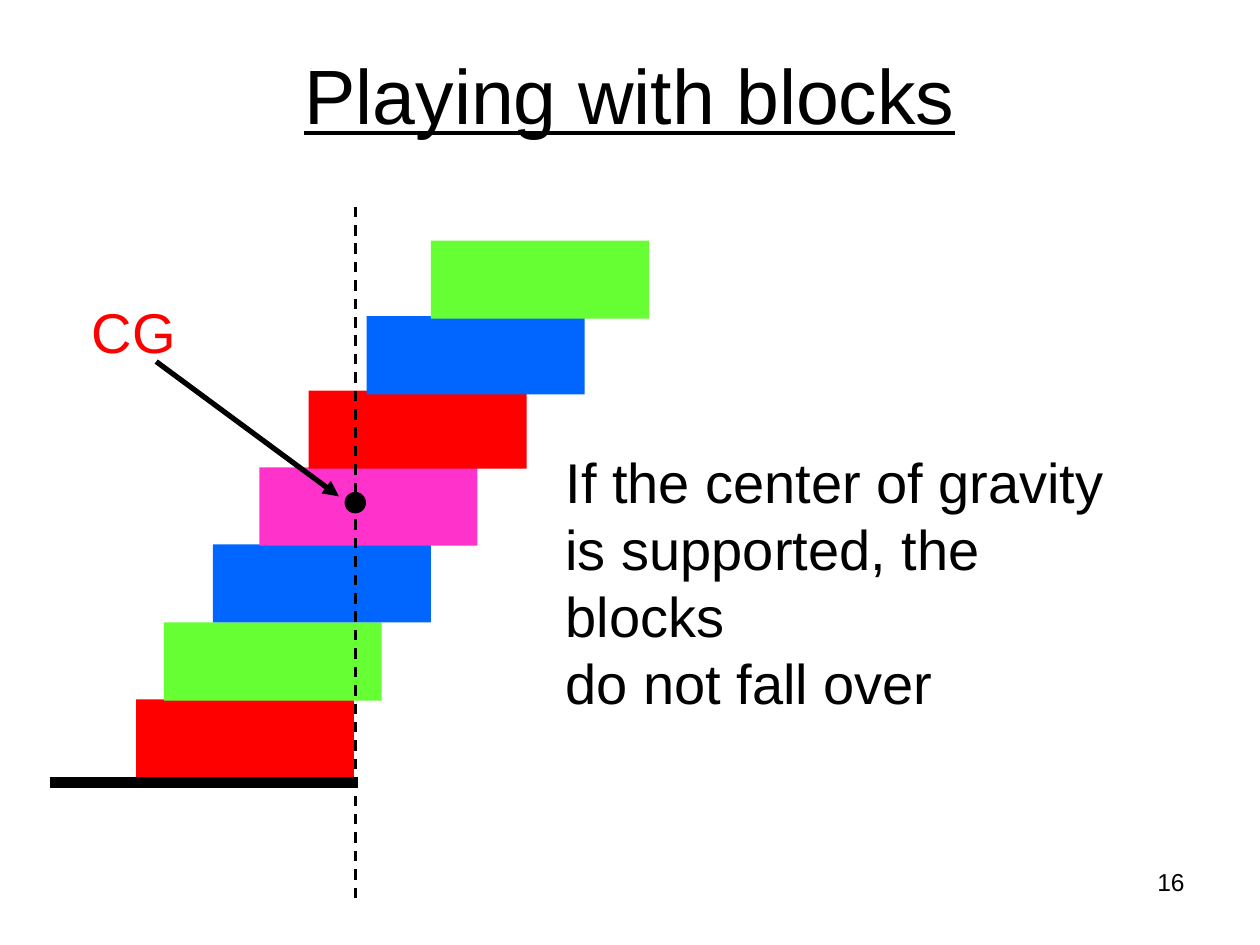
"""Build a slide showing a leaning stack of blocks balanced over its support."""
from lxml import etree
from pptx import Presentation
from pptx.dml.color import RGBColor
from pptx.enum.dml import MSO_LINE
from pptx.enum.shapes import MSO_CONNECTOR, MSO_SHAPE
from pptx.enum.text import MSO_ANCHOR, PP_ALIGN
from pptx.oxml.ns import qn
from pptx.util import Inches, Pt

RECTANGLE, OVAL = MSO_SHAPE.RECTANGLE, MSO_SHAPE.OVAL
STRAIGHT, DASH = MSO_CONNECTOR.STRAIGHT, MSO_LINE.DASH
TOP, MIDDLE = MSO_ANCHOR.TOP, MSO_ANCHOR.MIDDLE
LEFT, CENTER, RIGHT = PP_ALIGN.LEFT, PP_ALIGN.CENTER, PP_ALIGN.RIGHT

FONT = "Arial"
COLORS = {"black": "000000", "red": "FF0000", "green": "66FF33",
          "blue": "0066FF", "pink": "FF33CC"}

BLOCK_WIDTH, BLOCK_HEIGHT = 1.73, 0.62
BLOCKS = [
    (1.08, 5.55, "red"),
    (1.30, 4.94, "green"),
    (1.69, 4.32, "blue"),
    (2.06, 3.71, "pink"),
    (2.45, 3.10, "red"),
    (2.91, 2.51, "blue"),
    (3.42, 1.91, "green"),
]
TABLE_EDGE = ((0.4, 6.21), (2.84, 6.21))
PLUMB_LINE = ((2.82, 1.64), (2.82, 7.14))
CG_ARROW = ((1.24, 2.87), (2.69, 3.94))
CG_DOT = (2.74, 3.91, 0.16, 0.16)

TITLE = ["Playing with blocks"]
EXPLANATION = ["If the center of gravity", "is supported, the blocks", "do not fall over"]


def add_filled(slide, kind, box, color):
    shape = slide.shapes.add_shape(kind, *map(Inches, box))
    shape.shadow.inherit = False
    shape.fill.solid()
    shape.fill.fore_color.rgb = RGBColor.from_string(COLORS[color])
    shape.line.fill.background()
    return shape


def style_line(line, width):
    line.color.rgb = RGBColor.from_string(COLORS["black"])
    line.width = Pt(width)


def add_line(slide, ends, width, dashed=False, arrow=False):
    start, end = ends
    connector = slide.shapes.add_connector(STRAIGHT, *map(Inches, start + end))
    style_line(connector.line, width)
    if dashed:
        connector.line.dash_style = DASH
    properties = connector._element.spPr
    if arrow:
        etree.SubElement(properties.find(qn("a:ln")), qn("a:tailEnd"), type="triangle")
    etree.SubElement(properties, qn("a:effectLst"))


def add_text(slide, box, lines, size, color="black", align=LEFT, anchor=TOP,
             underline=False, wrap=True):
    frame = slide.shapes.add_textbox(*map(Inches, box)).text_frame
    frame.word_wrap = wrap
    frame.vertical_anchor = anchor
    for index, line in enumerate(lines):
        paragraph = frame.add_paragraph() if index else frame.paragraphs[0]
        paragraph.alignment = align
        run = paragraph.add_run()
        run.text = line
        run.font.name = FONT
        run.font.size = Pt(size)
        run.font.underline = underline
        run.font.color.rgb = RGBColor.from_string(COLORS[color])


def main():
    presentation = Presentation()
    presentation.slide_width, presentation.slide_height = Inches(10), Inches(7.5)
    slide = presentation.slides.add_slide(presentation.slide_layouts[6])

    for left, top, color in BLOCKS:
        add_filled(slide, RECTANGLE, (left, top, BLOCK_WIDTH, BLOCK_HEIGHT), color)
    add_line(slide, TABLE_EDGE, 6)
    dot = add_filled(slide, OVAL, CG_DOT, "black")
    style_line(dot.line, 0.75)
    add_line(slide, PLUMB_LINE, 1.5, dashed=True)

    add_text(slide, (4.39, 3.5, 4.8, 1.7), EXPLANATION, 32)
    add_text(slide, (0.5, 0.12, 9, 1.25), TITLE, 44, align=CENTER, anchor=MIDDLE,
             underline=True)
    add_text(slide, (0.63, 2.31, 0.87, 0.63), ["CG"], 32, "red", wrap=False)
    add_line(slide, CG_ARROW, 3, arrow=True)
    add_text(slide, (7.17, 6.83, 2.33, 0.52), ["16"], 14, align=RIGHT)
    presentation.save("out.pptx")


if __name__ == "__main__":
    main()
